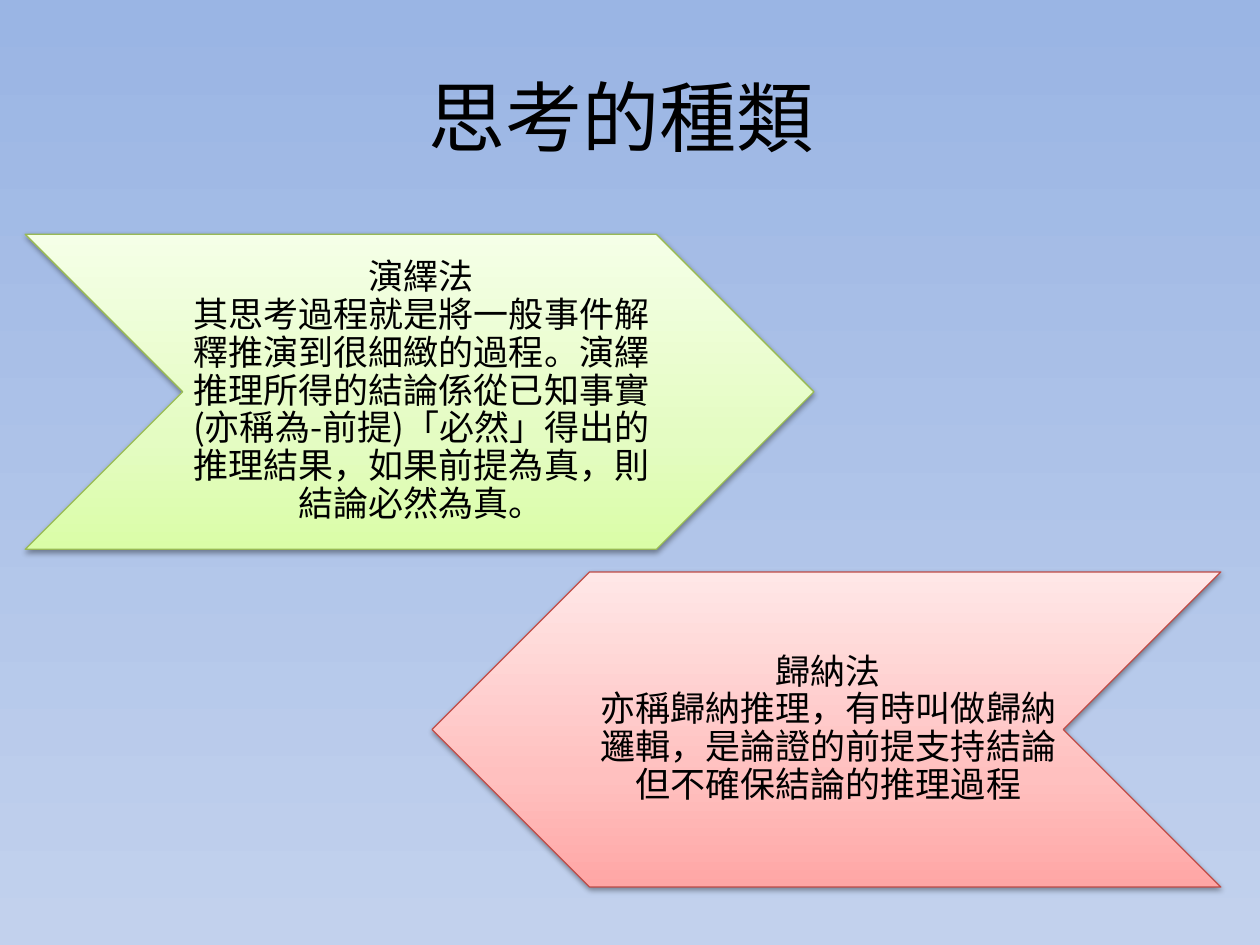
"""Build a slide that sets out two kinds of thinking."""
import copy

import pptx
import pptx.dml.color
import pptx.enum.shapes
import pptx.enum.text
import pptx.oxml
import pptx.util

Inches, Pt = pptx.util.Inches, pptx.util.Pt
RGB = pptx.dml.color.RGBColor.from_string
ALIGN = pptx.enum.text.PP_ALIGN.CENTER
MIDDLE = pptx.enum.text.MSO_ANCHOR.MIDDLE
NS = 'xmlns:a="http://schemas.openxmlformats.org/drawingml/2006/main"'

FONT = "Noto Sans CJK SC"
HEX = {"text": "000000", "green": "98B955", "red": "BF4C48"}
SKY = [(0, "9AB5E4"), (1, "C2D1ED")]
FILLS = {
    "green": [(0, "DAFDA7"), (0.35, "E4FCC2"), (1, "F5FFE7")],
    "red": [(0, "FFA6A5"), (0.35, "FFC0BF"), (1, "FFE7E7")],
}
TITLE = "思考的種類"
KINDS = [
    ("green", 0.2, 1.86, False, "演繹法",
     "其思考過程就是將一般事件解釋推演到很細緻的過程。演繹推理所得的結論係從已知事實"
     "(亦稱為-前提)「必然」得出的推理結果，如果前提為真，則結論必然為真。"),
    ("red", 3.43, 4.54, True, "歸納法",
     "亦稱歸納推理，有時叫做歸納邏輯，是論證的前提支持結論但不確保結論的推理過程"),
]
WIDE, HIGH = 6.26, 2.5
NOTCH = HIGH / 2
SHADOW = (
    f'<a:outerShdw {NS} blurRad="{Pt(3.1)}" dist="{Pt(1.6)}" dir="5400000" '
    'rotWithShape="0"><a:srgbClr val="000000"><a:alpha val="38000"/>'
    '</a:srgbClr></a:outerShdw>'
)


def shade(fill, root, stops, angle):
    fill.gradient()
    fill.gradient_angle = angle
    group = root.xpath(".//a:gsLst")[0]
    for _ in stops[2:]:
        group.append(copy.deepcopy(group[0]))
    for stop, (place, color) in zip(fill.gradient_stops, stops):
        stop.position = place
        stop.color.rgb = RGB(color)


def write(frame, text, size):
    frame.word_wrap = True
    frame.vertical_anchor = MIDDLE
    para = frame.paragraphs[0]
    para.text = text
    para.alignment = ALIGN
    para.font.size = Pt(size)
    para.font.color.rgb = RGB(HEX["text"])
    para.font.name = FONT
    props = para._p.xpath("a:pPr/a:defRPr")[0]
    props.append(pptx.oxml.parse_xml(f'<a:ea {NS} typeface="{FONT}"/>'))
    return para


def arrow(slide, color, left, top, flip):
    kind = pptx.enum.shapes.MSO_SHAPE.CHEVRON
    shape = slide.shapes.add_shape(
        kind, Inches(left), Inches(top), Inches(WIDE), Inches(HIGH))
    props = shape._element.spPr
    shade(shape.fill, props, FILLS[color], 90)
    shape.line.color.rgb = RGB(HEX[color])
    shape.line.width = Pt(0.75)
    shape.shadow.inherit = False
    props.xpath("a:effectLst")[0].append(pptx.oxml.parse_xml(SHADOW))
    if flip:
        props.xfrm.set("flipH", "1")


def label(slide, left, top, head, body):
    box = slide.shapes.add_textbox(
        Inches(left + NOTCH), Inches(top), Inches(WIDE - 2 * NOTCH), Inches(HIGH))
    frame = box.text_frame
    frame.margin_left, frame.margin_right = Inches(0.03), 0
    frame.margin_top = frame.margin_bottom = Inches(0.01)
    write(frame, f"{head}\v{body}", 20).line_spacing = 0.9


def main():
    deck = pptx.Presentation()
    deck.slide_width, deck.slide_height = Inches(10), Inches(7.5)
    slide = deck.slides.add_slide(deck.slide_layouts[5])
    shade(slide.background.fill, slide.element, SKY, 270)
    title = slide.shapes.title
    title.left, title.top = Inches(0.43), Inches(0.29)
    title.width, title.height = Inches(9), Inches(1.25)
    write(title.text_frame, TITLE, 44)
    for color, left, top, flip, head, body in KINDS:
        arrow(slide, color, left, top, flip)
        label(slide, left, top, head, body)
    deck.save("out.pptx")


if __name__ == "__main__":
    main()
